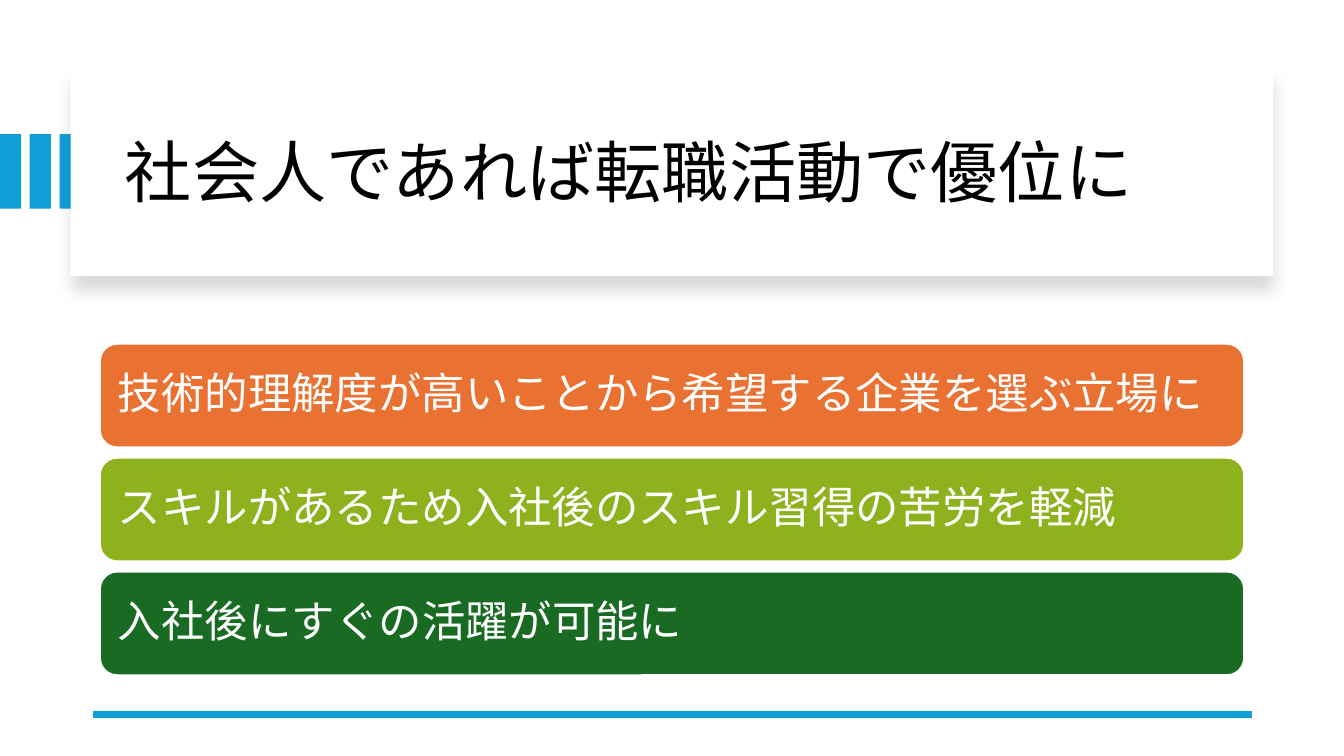
import pptx
import pptx.dml.color
import pptx.enum.shapes
import pptx.enum.text
import pptx.oxml
import pptx.oxml.ns
import pptx.util

Inches = pptx.util.Inches
Pt = pptx.util.Pt
qn = pptx.oxml.ns.qn
SHAPES = pptx.enum.shapes.MSO_SHAPE

COLORS = {
    "blue": "0F9ED5",
    "orange": "E97132",
    "lime": "8EB21E",
    "green": "196B24",
    "white": "FFFFFF",
    "black": "000000",
}
FONT = "Noto Sans CJK JP"

TITLE = "社会人であれば転職活動で優位に"
BENEFITS = [
    ("技術的理解度が高いことから希望する企業を選ぶ立場に", "orange"),
    ("スキルがあるため入社後のスキル習得の苦労を軽減", "lime"),
    ("入社後にすぐの活躍が可能に", "green"),
]


def rgb(name):
    return pptx.dml.color.RGBColor.from_string(COLORS[name])


def write_text(shape, text, size, color, inset_x=0.1, inset_y=0.05):
    frame = shape.text_frame
    frame.word_wrap = True
    frame.vertical_anchor = pptx.enum.text.MSO_ANCHOR.MIDDLE
    frame.margin_left = frame.margin_right = Inches(inset_x)
    frame.margin_top = frame.margin_bottom = Inches(inset_y)
    paragraph = frame.paragraphs[0]
    paragraph.alignment = pptx.enum.text.PP_ALIGN.LEFT
    paragraph.line_spacing = 0.9
    run = paragraph.add_run()
    run.text = text
    run.font.size = Pt(size)
    run.font.name = FONT
    run.font.color.rgb = rgb(color)
    east_asian = pptx.oxml.parse_xml(
        f'<a:ea {pptx.oxml.ns.nsdecls("a")} typeface="{FONT}"/>')
    run.font._element.append(east_asian)


class SlideBuilder:
    """Draws styled elements on one slide."""

    def __init__(self, slide):
        self.slide = slide

    def box(self, left, top, width, height, fill, kind=SHAPES.RECTANGLE, outline=None):
        shape = self.slide.shapes.add_shape(
            kind, Inches(left), Inches(top), Inches(width), Inches(height))
        shape.shadow.inherit = False
        shape.fill.solid()
        shape.fill.fore_color.rgb = rgb(fill)
        if outline:
            shape.line.color.rgb = rgb(outline)
            shape.line.width = Pt(1.5)
        else:
            shape.line.fill.background()
        return shape

    def card(self, left, top, width, height):
        """White box with a soft shadow below it."""
        shape = self.box(left, top, width, height, "white")
        shadow = pptx.oxml.parse_xml(
            f'<a:outerShdw {pptx.oxml.ns.nsdecls("a")} blurRad="{Pt(11)}" '
            f'dist="{Pt(10)}" dir="5400000" algn="t" rotWithShape="0">'
            f'<a:srgbClr val="{COLORS["black"]}"><a:alpha val="15000"/></a:srgbClr>'
            '</a:outerShdw>')
        shape._element.spPr.find(qn("a:effectLst")).append(shadow)

    def title(self, left, top, width, height, text):
        shape = self.slide.shapes.add_textbox(
            Inches(left), Inches(top), Inches(width), Inches(height))
        write_text(shape, text, size=48, color="black")

    def bar(self, left, top, width, height, text, fill):
        shape = self.box(left, top, width, height, fill,
                         kind=SHAPES.ROUNDED_RECTANGLE, outline="white")
        write_text(shape, text, size=31, color="white", inset_x=0.13, inset_y=0.13)

    def rule(self, start_x, end_x, y):
        line = self.slide.shapes.add_connector(
            pptx.enum.shapes.MSO_CONNECTOR.STRAIGHT,
            Inches(start_x), Inches(y), Inches(end_x), Inches(y))
        line.line.color.rgb = rgb("blue")
        line.line.width = Pt(4.5)
        line._element.spPr.append(
            pptx.oxml.parse_xml(f'<a:effectLst {pptx.oxml.ns.nsdecls("a")}/>'))


def main():
    presentation = pptx.Presentation()
    presentation.slide_width = Inches(13.33)
    presentation.slide_height = Inches(7.5)
    builder = SlideBuilder(presentation.slides.add_slide(presentation.slide_layouts[6]))

    for index in range(3):
        builder.box(0.295 * index, 1.33, 0.21, 0.74, "blue")
    builder.card(0.7, 0.67, 11.93, 2.07)
    builder.title(1.14, 0.89, 11.13, 1.7, TITLE)
    builder.rule(12.42, 0.92, 7.09)
    for index, (text, fill) in enumerate(BENEFITS):
        builder.bar(0.99, 3.41 + 1.13 * index, 11.35, 1.03, text, fill)

    presentation.save("out.pptx")


if __name__ == "__main__":
    main()
